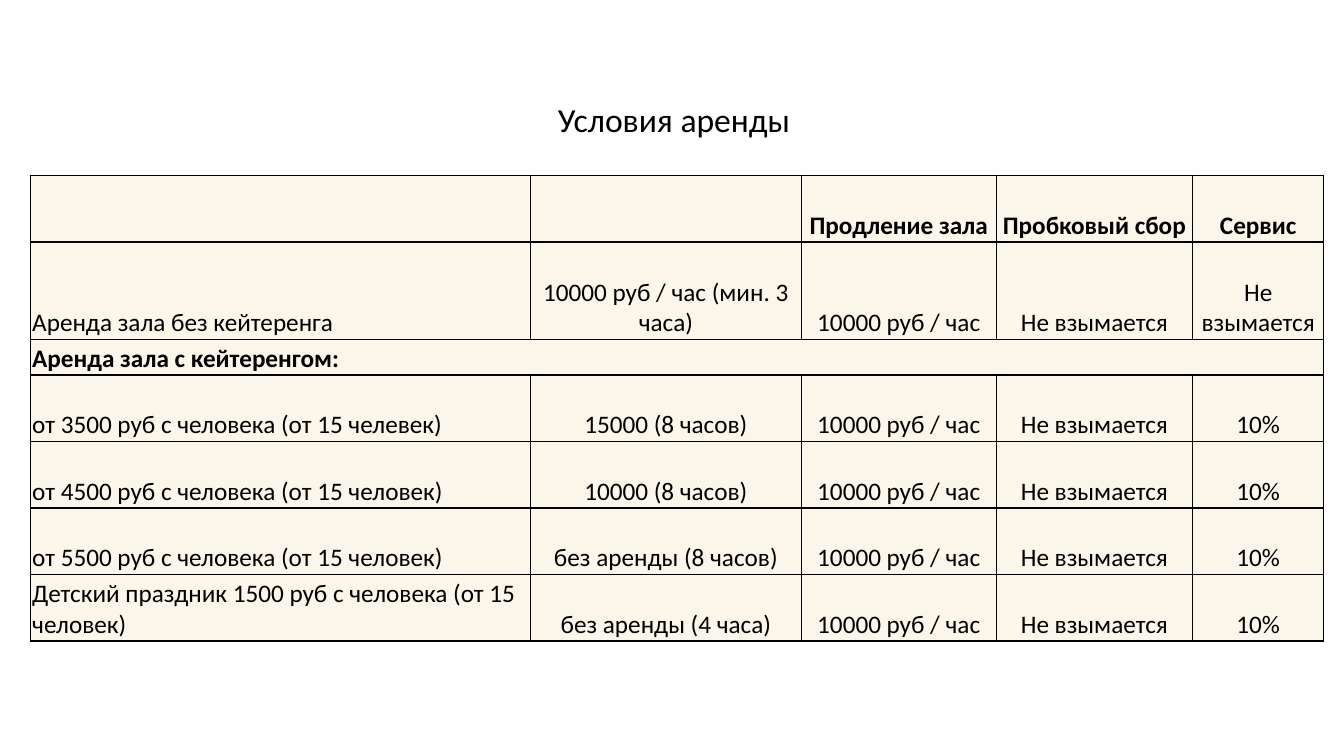
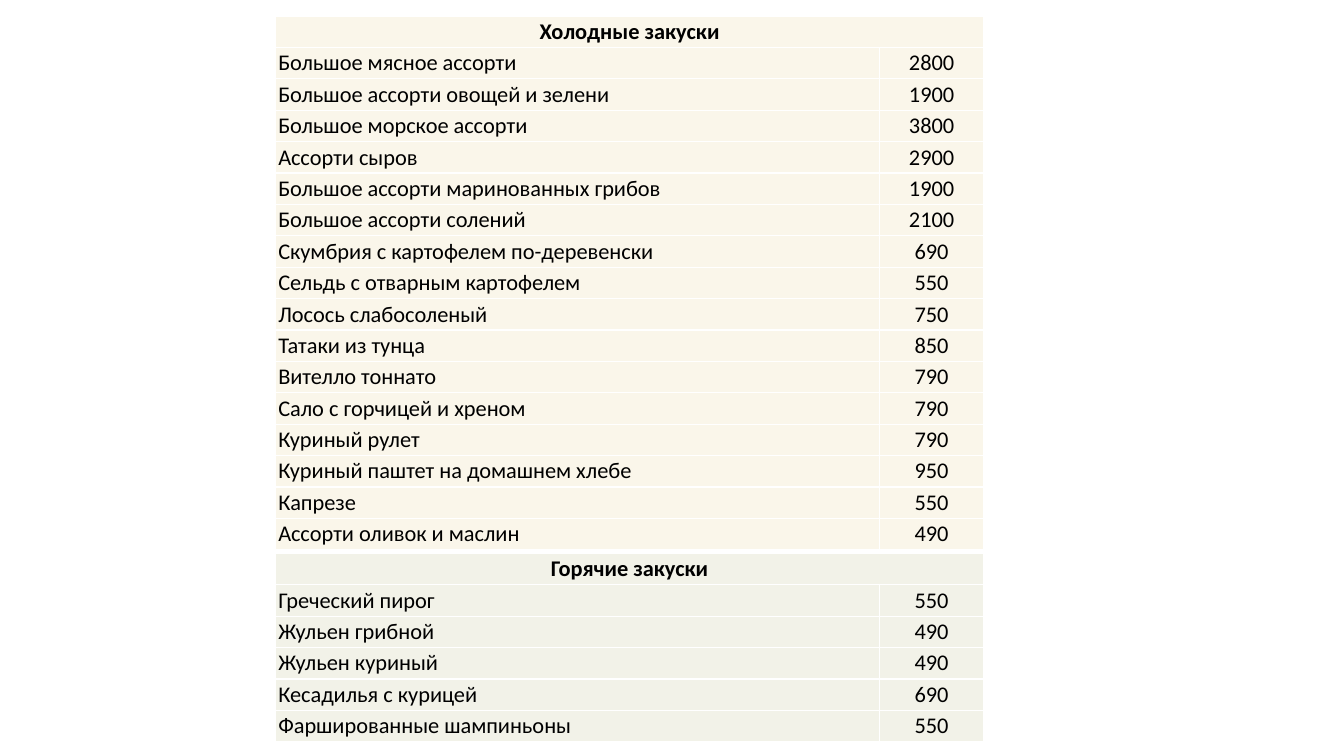
"""Build two slides: hall rental terms and the appetizer price list."""
import dataclasses

import pptx
import pptx.dml.color
import pptx.enum.text
import pptx.oxml
import pptx.oxml.ns
import pptx.util

FONT = "Calibri"
BLACK, WHITE, CREAM, SAGE = "000000", "FFFFFF", "FAF6EA", "F2F2E8"
LEFT, CENTER = pptx.enum.text.PP_ALIGN.LEFT, pptx.enum.text.PP_ALIGN.CENTER
WIDTH, HEIGHT = pptx.util.Inches(13.33), pptx.util.Inches(7.5)
EXTENSION, FREE = "10000 руб / час", "Не взымается"
MENU_ROW = 4.11


@dataclasses.dataclass
class Grid:
    """A table whose lengths are percentages of the slide."""
    left: float
    top: float
    cols: list[float]
    rows: list[float]
    cells: list[list[str]]
    fill: str
    border: str
    size: int
    margins: tuple[float, float]
    bold_rows: tuple[int, ...]
    header_align: int = LEFT


def x(share: float) -> int:
    """Turn a percentage of the slide width into a length."""
    return round(WIDTH * share / 100)


def y(share: float) -> int:
    """Turn a percentage of the slide height into a length."""
    return round(HEIGHT * share / 100)


def rgb(color: str) -> pptx.dml.color.RGBColor:
    """Read a hex colour."""
    return pptx.dml.color.RGBColor.from_string(color)


def write(tf, text: str, *, size: int, bold: bool = False,
          align: int = LEFT, color: str = BLACK) -> None:
    """Put one formatted line of text into a text frame."""
    p = tf.paragraphs[0]
    p.alignment = align
    r = p.add_run()
    r.text = text
    r.font.name, r.font.size, r.font.bold = FONT, pptx.util.Pt(size), bold
    r.font.color.rgb = rgb(color)


def set_borders(cell, color: str) -> None:
    """Draw a one-point line on each side of a cell."""
    ns = pptx.oxml.ns.nsdecls("a")
    for i, side in enumerate(("lnL", "lnR", "lnT", "lnB")):
        line = pptx.oxml.parse_xml(
            f'<a:{side} {ns} w="12700"><a:solidFill><a:srgbClr val="{color}"/>'
            f'</a:solidFill></a:{side}>')
        cell._tc.get_or_add_tcPr().insert(i, line)


def add_grid(s, grid: Grid) -> None:
    """Draw a table; a row with a single text spans all columns."""
    n_cols = len(grid.cols)
    tbl = s.shapes.add_table(len(grid.rows), n_cols, x(grid.left), y(grid.top),
                             x(sum(grid.cols)), y(sum(grid.rows))).table
    tbl.first_row = tbl.horz_banding = False
    for col, share in zip(tbl.columns, grid.cols):
        col.width = x(share)
    side, edge = map(pptx.util.Inches, grid.margins)
    for i, (share, texts) in enumerate(zip(grid.rows, grid.cells)):
        tbl.rows[i].height = y(share)
        spans = len(texts) == 1
        for j in range(n_cols):
            cell = tbl.cell(i, j)
            cell.fill.solid()
            cell.fill.fore_color.rgb = rgb(grid.fill)
            set_borders(cell, grid.border)
            cell.margin_left = cell.margin_right = side
            cell.margin_top = cell.margin_bottom = edge
            cell.vertical_anchor = pptx.enum.text.MSO_ANCHOR.BOTTOM
            if j < len(texts) and texts[j]:
                align = grid.header_align if spans else CENTER if j else LEFT
                write(cell.text_frame, texts[j], size=grid.size,
                      bold=i in grid.bold_rows, align=align)
        if spans:
            tbl.cell(i, 0).merge(tbl.cell(i, n_cols - 1))


def add_title(s, text: str) -> None:
    """Place and format the slide title."""
    sp = s.shapes.title
    sp.left, sp.top, sp.width, sp.height = x(40.66), y(12.4), x(18.98), y(6.67)
    tf = sp.text_frame
    tf.word_wrap = False
    tf.auto_size = pptx.enum.text.MSO_AUTO_SIZE.NONE
    tf.vertical_anchor = pptx.enum.text.MSO_ANCHOR.TOP
    write(tf, text, size=24, align=CENTER)


def menu(top: float, header: str, dishes: list[tuple[str, int]], fill: str) -> Grid:
    """Describe one section of the price list."""
    cells = [[header]] + [[dish, str(price)] for dish, price in dishes]
    return Grid(20.48, top, [44.94, 7.8], [MENU_ROW] * len(cells), cells, fill,
                WHITE, 16, (0.03, 0.02), (0,), CENTER)


RENTAL = Grid(
    2.25, 23.2, [37.21, 20.18, 14.48, 14.63, 9.75],
    [8.8, 12.93, 4.67] + [8.8] * 4,
    [["", "", "Продление зала", "Пробковый сбор", "Сервис"],
     ["Аренда зала без кейтеренга", "10000 руб / час (мин. 3 часа)",
      EXTENSION, FREE, FREE],
     ["Аренда зала с кейтеренгом:"]]
    + [[offer, rent, EXTENSION, FREE, "10%"] for offer, rent in (
        ("от 3500 руб c человека (от 15 челевек)", "15000 (8 часов)"),
        ("от 4500 руб с человека (от 15 человек)", "10000 (8 часов)"),
        ("от 5500 руб с человека (от 15 человек)", "без аренды (8 часов)"),
        ("Детский праздник 1500 руб с человека (от 15 человек)",
         "без аренды (4 часа)"))],
    CREAM, BLACK, 18, (0.02, 0.01), (0, 2))

COLD = menu(2.13, "Холодные закуски", [
    ("Большое мясное ассорти", 2800),
    ("Большое ассорти овощей и зелени", 1900),
    ("Большое морское ассорти", 3800),
    ("Ассорти сыров", 2900),
    ("Большое ассорти маринованных грибов", 1900),
    ("Большое ассорти солений", 2100),
    ("Скумбрия с картофелем по-деревенски", 690),
    ("Сельдь с отварным картофелем", 550),
    ("Лосось слабосоленый", 750),
    ("Татаки из тунца", 850),
    ("Вителло тоннато", 790),
    ("Сало с горчицей и хреном", 790),
    ("Куриный рулет", 790),
    ("Куриный паштет на домашнем хлебе", 950),
    ("Капрезе", 550),
    ("Ассорти оливок и маслин", 490)], CREAM)

HOT = menu(73.2, "Горячие закуски", [
    ("Греческий пирог", 550),
    ("Жульен грибной", 490),
    ("Жульен куриный", 490),
    ("Кесадилья с курицей", 690),
    ("Фаршированные шампиньоны", 550)], SAGE)


def main() -> None:
    """Build and save the presentation."""
    prs = pptx.Presentation()
    prs.slide_width, prs.slide_height = WIDTH, HEIGHT
    title_only, blank = prs.slide_layouts[5], prs.slide_layouts[6]

    s = prs.slides.add_slide(title_only)
    add_title(s, "Условия аренды")
    add_grid(s, RENTAL)

    s = prs.slides.add_slide(blank)
    for grid in (COLD, HOT):
        add_grid(s, grid)

    prs.save("out.pptx")


if __name__ == "__main__":
    main()
